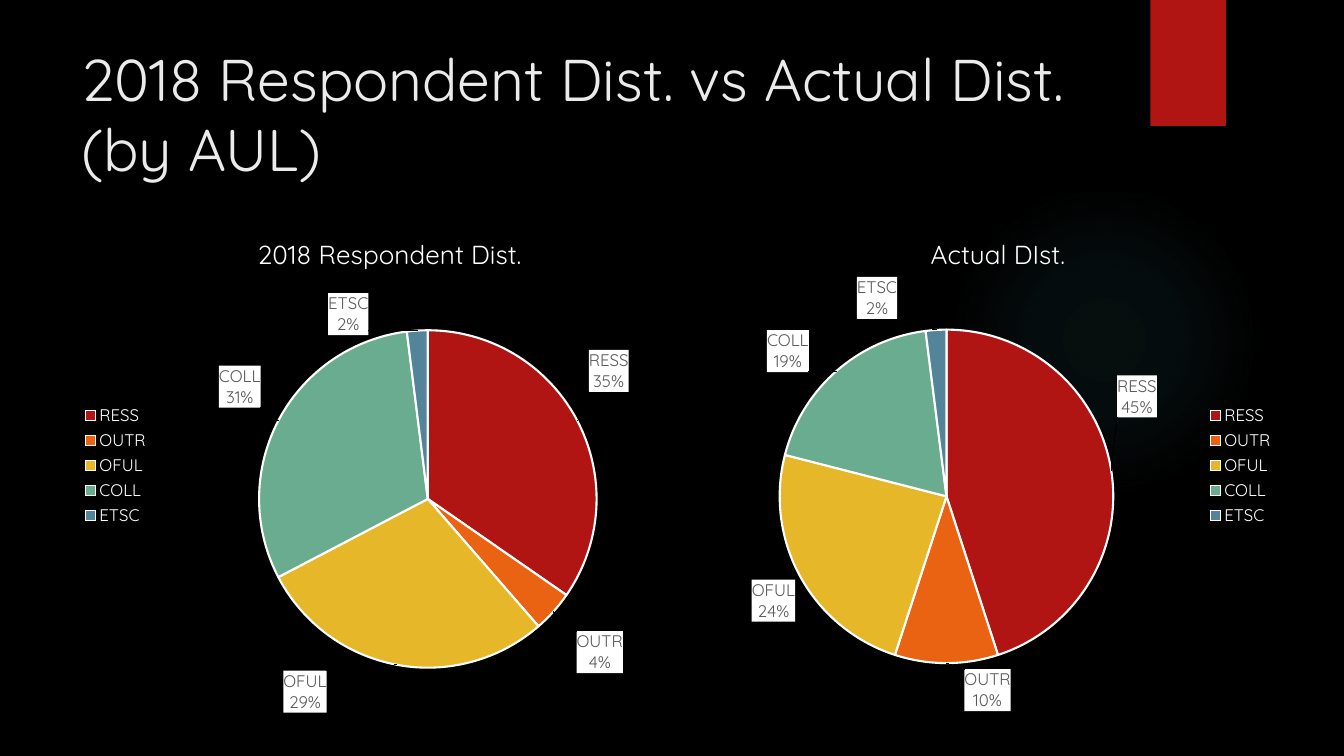
from lxml import etree
from pptx import Presentation
from pptx.chart.data import CategoryChartData
from pptx.dml.color import RGBColor
from pptx.enum.chart import XL_CHART_TYPE as ChartType
from pptx.enum.chart import XL_LABEL_POSITION as LabelPosition
from pptx.enum.chart import XL_LEGEND_POSITION as LegendPosition
from pptx.enum.shapes import MSO_SHAPE as Shape
from pptx.oxml import parse_xml
from pptx.oxml.ns import nsdecls, qn
from pptx.util import Inches, Pt

FONT = "Quicksand"
COLOURS = {"back": "000000", "glow": "50B9C1", "ribbon": "B01513", "title": "EBEBEB",
           "white": "FFFFFF", "label": "595959"}
SLICES = {"RESS": "B01513", "OUTR": "EA6312", "OFUL": "E6B729", "COLL": "6AAC90",
          "ETSC": "54849A"}


def rgb(name):
    return RGBColor.from_string(COLOURS[name])


def set_font(font, size, colour):
    font.name, font.size, font.bold = FONT, Pt(size), False
    font.color.rgb = rgb(colour)


def add_plain_shape(page, kind, box):
    shape = page.shapes.add_shape(kind, *map(Inches, box))
    shape.shadow.inherit = False
    shape.line.fill.background()
    return shape


def add_backdrop(page):
    page.background.fill.solid()
    page.background.fill.fore_color.rgb = rgb("back")
    glow = add_plain_shape(page, Shape.OVAL, (9.41, 1.83, 3.08, 3.08))
    stops = "".join(
        f'<a:gs pos="{place * 1000}"><a:srgbClr val="{COLOURS["glow"]}">'
        f'<a:alpha val="{alpha * 1000}"/></a:srgbClr></a:gs>'
        for place, alpha in ((0, 7), (36, 6), (69, 0)))
    gradient = parse_xml(
        f'<a:gradFill {nsdecls("a")}><a:gsLst>{stops}</a:gsLst><a:path path="circle">'
        '<a:fillToRect l="50000" t="50000" r="50000" b="50000"/></a:path></a:gradFill>')
    glow._element.spPr.find(qn("a:prstGeom")).addnext(gradient)
    ribbon = add_plain_shape(page, Shape.RECTANGLE, (11.41, 0, 0.75, 1.25))
    ribbon.fill.solid()
    ribbon.fill.fore_color.rgb = rgb("ribbon")


def add_title(page, box, text):
    frame = page.shapes.add_textbox(*map(Inches, box)).text_frame
    frame.word_wrap = True
    para = frame.paragraphs[0]
    para.text = text
    set_font(para.font, 42, "title")


def manual_layout(x, y, width=None, height=None, inner=False, edge=True):
    parts = [("layoutTarget", "inner")] if inner else []
    if edge:
        parts += [("xMode", "edge"), ("yMode", "edge")]
    parts += [("x", x), ("y", y)]
    if width:
        parts += [("w", width), ("h", height)]
    inside = "".join(f'<c:{tag} val="{value}"/>' for tag, value in parts)
    return parse_xml(f'<c:layout {nsdecls("c")}><c:manualLayout>{inside}'
                     '</c:manualLayout></c:layout>')


def style_label(label, separator_after):
    fill = parse_xml(f'<c:spPr {nsdecls("c", "a")}><a:solidFill><a:srgbClr '
                     f'val="{COLOURS["white"]}"/></a:solidFill><a:ln><a:noFill/></a:ln></c:spPr>')
    label.find(qn("c:txPr")).addprevious(fill)
    for tag, value in (("showVal", 0), ("showCatName", 1), ("showPercent", 1)):
        label.find(qn(f"c:{tag}")).set("val", str(value))
    separator = etree.Element(qn("c:separator"))
    separator.text = "\n"
    label.find(qn(separator_after)).addnext(separator)


def add_labels(series, shifts):
    labels = series.data_labels
    set_font(labels.font, 12, "label")
    labels.number_format, labels.number_format_is_linked = "0%", False
    labels.position = LabelPosition.OUTSIDE_END
    labels.show_percentage = labels.show_category_name = True
    labels.show_value = False
    style_label(labels._element, "c:showBubbleSize"
                if labels._element.find(qn("c:showBubbleSize")) is not None
                else "c:showPercent")
    for index, name in enumerate(SLICES):
        if name not in shifts:
            continue
        label = series.points[index].data_label
        set_font(label.font, 12, "label")
        label.position = LabelPosition.OUTSIDE_END
        element = labels._element.xpath(f'c:dLbl[c:idx/@val="{index}"]')[0]
        element.find(qn("c:idx")).addnext(manual_layout(*shifts[name], edge=False))
        style_label(element, "c:showBubbleSize")


def add_pie(page, box, title, values, legend_side, title_at, plot_box, shifts):
    data = CategoryChartData()
    data.categories = list(SLICES)
    data.add_series("Series 1", values)
    chart = page.shapes.add_chart(ChartType.PIE, *map(Inches, box), data).chart
    set_font(chart.font, 10, "white")

    chart.has_title = True
    para = chart.chart_title.text_frame.paragraphs[0]
    para.text = title
    set_font(para.font, 18.6, "white")
    heading = chart.chart_title._element
    for old in heading.findall(qn("c:layout")):
        heading.remove(old)
    heading.find(qn("c:tx")).addnext(manual_layout(*title_at))

    chart.has_legend = True
    chart.legend.position = legend_side
    chart.legend.include_in_layout = False
    set_font(chart.legend.font, 12, "white")

    plot = chart.plots[0]
    plot.vary_by_categories = True
    area = plot._element.getparent()
    for old in area.findall(qn("c:layout")):
        area.remove(old)
    area.insert(0, manual_layout(*plot_box, inner=True))
    series = plot.series[0]
    for index, colour in enumerate(SLICES.values()):
        look = series.points[index].format
        look.fill.solid()
        look.fill.fore_color.rgb = RGBColor.from_string(colour)
        look.line.color.rgb = rgb("white")
        look.line.width = Pt(1.5)
    add_labels(series, shifts)


def main():
    deck = Presentation()
    deck.slide_width, deck.slide_height = Inches(13.33), Inches(7.5)
    page = deck.slides.add_slide(deck.slide_layouts[6])
    add_backdrop(page)
    add_title(page, (0.71, 0.37, 10.69, 0.94),
              "2018 Respondent Dist. vs Actual Dist. (by AUL)")
    add_pie(page, (0.71, 2.03, 6.2, 5.17), "2018 Respondent Dist.", (35, 4, 29, 31, 2),
            LegendPosition.LEFT, (0.29, 0.05), (0.3, 0.24, 0.54, 0.65),
            {"RESS": (0.01, -0.05), "OUTR": (0.03, 0.03), "OFUL": (-0.11, 0),
             "COLL": (-0.02, -0.02), "ETSC": (-0.11, 0.02)})
    add_pie(page, (6.91, 2.03, 5.83, 5.17), "Actual DIst.", (45, 10, 24, 19, 2),
            LegendPosition.RIGHT, (0.39, 0.05), (0.14, 0.24, 0.57, 0.64),
            {"RESS": (0, -0.1), "OUTR": (0.07, 0), "COLL": (-0.04, 0.01),
             "ETSC": (-0.1, -0.01)})
    deck.save("out.pptx")


if __name__ == "__main__":
    main()
